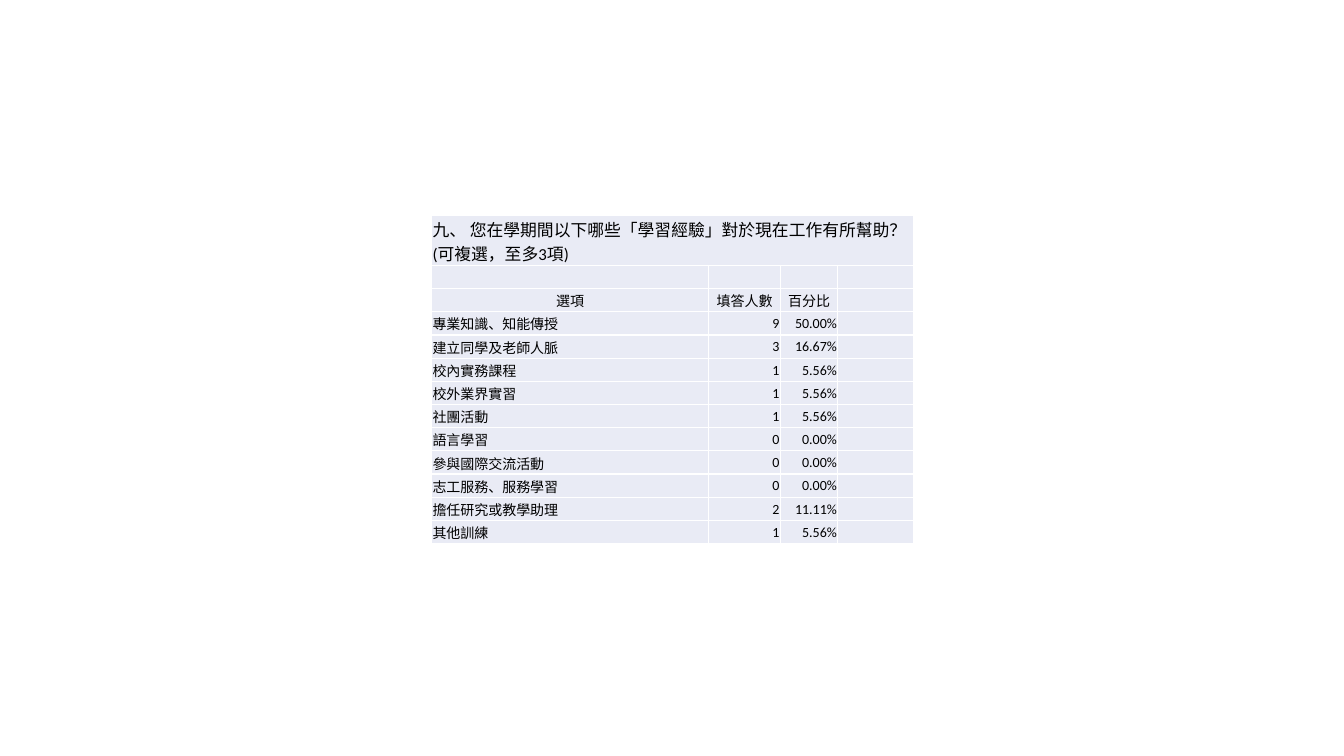
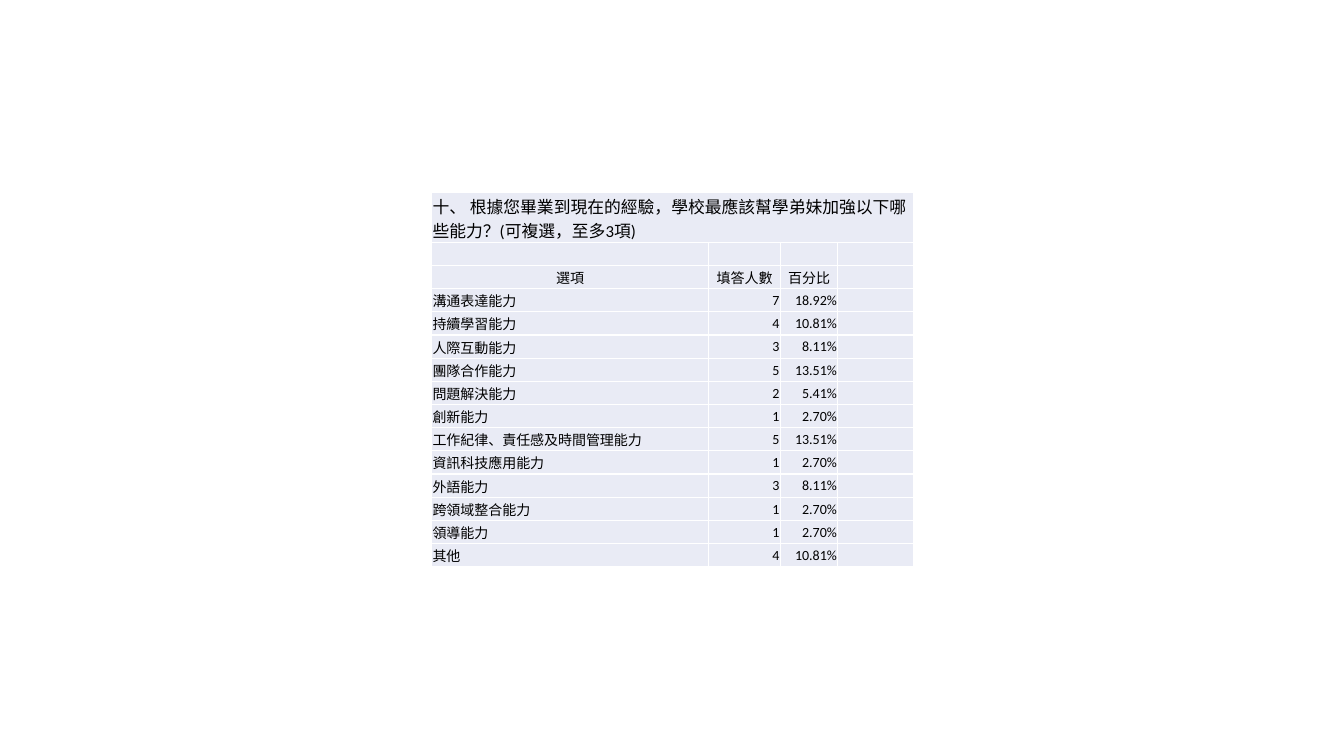
import pptx
import pptx.dml.color
import pptx.enum.text
import pptx.util
import lxml.etree

ALIGN = pptx.enum.text.PP_ALIGN
NS = "http://schemas.openxmlformats.org/drawingml/2006/main"


def tint(code):
    return pptx.dml.color.RGBColor.from_string(code)


def px(count):
    return pptx.util.Emu(count * 9144)


def put(target, values):
    for name, value in values.items():
        setattr(target, name, value)


class Deck:
    wide, high = 1333, 750
    cols = [275, 71, 57, 75]
    head, step = 46, 23
    fill, ink, edge = "E9EBF5", "000000", "FFFFFF"
    font = {"name": "Calibri", "bold": False}
    cell = {
        "margin_left": px(1),
        "margin_right": px(1),
        "margin_top": px(1),
        "margin_bottom": px(0),
        "vertical_anchor": pptx.enum.text.MSO_ANCHOR.MIDDLE,
    }
    flags = {"first_row": False, "horz_banding": False}

    def __init__(self):
        self.show = pptx.Presentation()
        put(self.show, {"slide_width": px(self.wide), "slide_height": px(self.high)})
        self.slide = None

    def page(self):
        self.slide = self.show.slides.add_slide(self.show.slide_layouts[6])

    def lines(self, cell):
        props = cell._tc.get_or_add_tcPr()
        for side in "LRTB":
            line = lxml.etree.SubElement(props, f"{{{NS}}}ln{side}", w="12700")
            paint = lxml.etree.SubElement(line, f"{{{NS}}}solidFill")
            lxml.etree.SubElement(paint, f"{{{NS}}}srgbClr", val=self.edge)

    def label(self, cell, text, size, align):
        para = cell.text_frame.paragraphs[0]
        para.alignment = align
        if text:
            run = para.add_run()
            run.text = text
            put(run.font, {**self.font, "size": pptx.util.Pt(size)})
            run.font.color.rgb = tint(self.ink)
        else:
            lxml.etree.SubElement(para._p, f"{{{NS}}}endParaRPr", sz=str(size * 100))

    def style(self, cell):
        put(cell, self.cell)
        self.lines(cell)
        cell.fill.solid()
        cell.fill.fore_color.rgb = tint(self.fill)

    def table(self, title, data):
        rows = [(title,), (), ("選項", "填答人數", "百分比"), *data]
        width = sum(self.cols)
        tall = self.head + self.step * (len(rows) - 1)
        left = (self.wide - width + 1) // 2
        top = (self.high - tall + 1) // 2
        frame = self.slide.shapes.add_table(
            len(rows), len(self.cols), px(left), px(top), px(width), px(tall)
        )
        grid = frame.table
        put(grid, self.flags)
        for col, size in zip(grid.columns, self.cols):
            col.width = px(size)
        for r, texts in enumerate(rows):
            grid.rows[r].height = px(self.step if r else self.head)
            for c in range(len(self.cols)):
                text = texts[c] if c < len(texts) else ""
                align = ALIGN.CENTER if r == 2 else ALIGN.RIGHT if r > 2 and c else ALIGN.LEFT
                cell = grid.cell(r, c)
                self.style(cell)
                self.label(cell, text, 10 if r else 12, align)
        grid.cell(0, 0).merge(grid.cell(0, len(self.cols) - 1))


POLLS = {
    "九、 您在學期間以下哪些「學習經驗」對於現在工作有所幫助？(可複選，至多3項)": [
        ("專業知識、知能傳授", "9", "50.00%"),
        ("建立同學及老師人脈", "3", "16.67%"),
        ("校內實務課程", "1", "5.56%"),
        ("校外業界實習", "1", "5.56%"),
        ("社團活動", "1", "5.56%"),
        ("語言學習", "0", "0.00%"),
        ("參與國際交流活動", "0", "0.00%"),
        ("志工服務、服務學習", "0", "0.00%"),
        ("擔任研究或教學助理", "2", "11.11%"),
        ("其他訓練", "1", "5.56%"),
    ],
    "十、 根據您畢業到現在的經驗，學校最應該幫學弟妹加強以下哪些能力？(可複選，至多3項)": [
        ("溝通表達能力", "7", "18.92%"),
        ("持續學習能力", "4", "10.81%"),
        ("人際互動能力", "3", "8.11%"),
        ("團隊合作能力", "5", "13.51%"),
        ("問題解決能力", "2", "5.41%"),
        ("創新能力", "1", "2.70%"),
        ("工作紀律、責任感及時間管理能力", "5", "13.51%"),
        ("資訊科技應用能力", "1", "2.70%"),
        ("外語能力", "3", "8.11%"),
        ("跨領域整合能力", "1", "2.70%"),
        ("領導能力", "1", "2.70%"),
        ("其他", "4", "10.81%"),
    ],
}


def main():
    deck = Deck()
    for title, data in POLLS.items():
        deck.page()
        deck.table(title, data)
    deck.show.save("out.pptx")


if __name__ == "__main__":
    main()
